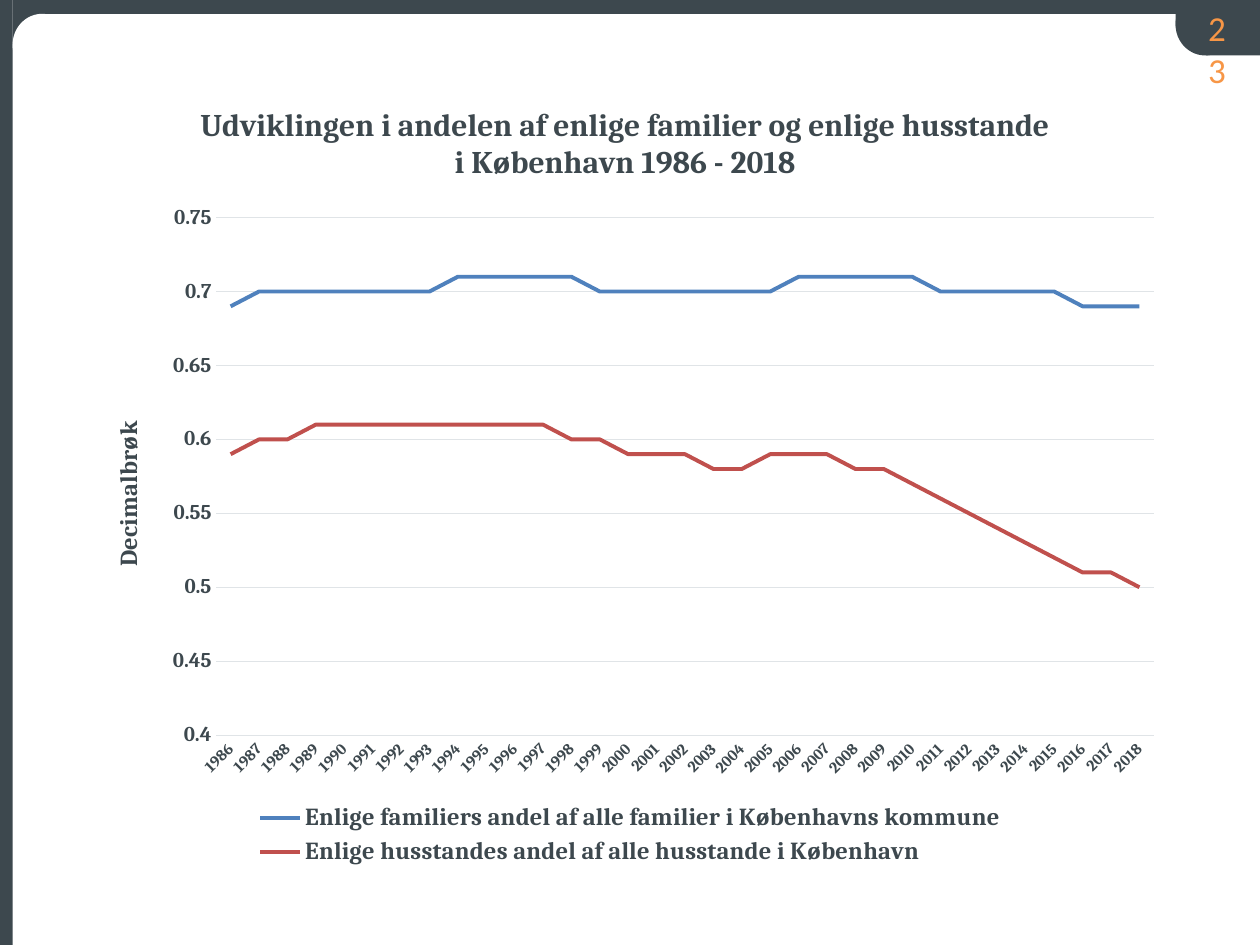
from pptx import Presentation
from pptx.chart.data import CategoryChartData
from pptx.dml.color import RGBColor
from pptx.enum.chart import XL_CHART_TYPE as Kind, XL_LEGEND_POSITION as Pos, XL_TICK_MARK as Tick
from pptx.enum.shapes import MSO_SHAPE as Form
from pptx.oxml import parse_xml
from pptx.oxml.ns import nsdecls, qn
from pptx.util import Inches, Pt

COLORS = {
    "dark": "3D484E", "white": "FFFFFF", "orange": "F79646",
    "grid": "E0E4E7", "blue": "4F81BD", "red": "C0504D",
}
FRAME = [
    (Form.RECTANGLE, "dark", (0, 0, 0.1, 7.5)),
    (Form.RECTANGLE, "dark", (0.1, 0, 9.9, 0.11)),
    (Form.RECTANGLE, "dark", (0.1, 0.11, 0.24, 0.24)),
    (Form.OVAL, "white", (0.1, 0.11, 0.47, 0.49)),
    (Form.RECTANGLE, "dark", (9.57, 0.11, 0.43, 0.33)),
    (Form.OVAL, "dark", (9.33, -0.05, 0.47, 0.49)),
    (Form.RECTANGLE, "dark", (9.33, 0, 0.31, 0.21)),
]
NUMBER = "23"
TITLE = "Udviklingen i andelen af enlige familier og enlige husstande i København 1986 - 2018"
AXIS = "Decimalbrøk"
YEARS = [str(year) for year in range(1986, 2019)]
SERIES = [
    ("Enlige familiers andel af alle familier i Københavns kommune", "blue", [
        0.69, 0.7, 0.7, 0.7, 0.7, 0.7, 0.7, 0.7, 0.71, 0.71, 0.71,
        0.71, 0.71, 0.7, 0.7, 0.7, 0.7, 0.7, 0.7, 0.7, 0.71, 0.71,
        0.71, 0.71, 0.71, 0.7, 0.7, 0.7, 0.7, 0.7, 0.69, 0.69, 0.69]),
    ("Enlige husstandes andel af alle husstande i København", "red", [
        0.59, 0.6, 0.6, 0.61, 0.61, 0.61, 0.61, 0.61, 0.61, 0.61, 0.61,
        0.61, 0.6, 0.6, 0.59, 0.59, 0.59, 0.58, 0.58, 0.59, 0.59, 0.59,
        0.58, 0.58, 0.57, 0.56, 0.55, 0.54, 0.53, 0.52, 0.51, 0.51, 0.5]),
]


def color(name):
    return RGBColor.from_string(COLORS[name])


def style(font, size, bold=True, name="Cambria", tint="dark"):
    font.size, font.bold, font.name = Pt(size), bold, name
    font.color.rgb = color(tint)


def stroke(line, tint, width):
    line.color.rgb = color(tint)
    line.width = Pt(width)


def caption(frame, text, size):
    run = frame.paragraphs[0].add_run()
    run.text = text
    style(run.font, size)


def place(node, after, inner=False, **spots):
    """Set a manual layout, in shares of the chart, behind the child named after."""
    for old in node.findall(qn("c:layout")):
        node.remove(old)
    target = '<c:layoutTarget val="inner"/>' if inner else ""
    modes = "".join(f'<c:{key}Mode val="edge"/>' for key in "xy")
    sizes = "".join(f'<c:{key} val="{val}"/>' for key, val in spots.items())
    layout = parse_xml(f'<c:layout {nsdecls("c")}><c:manualLayout>{target}{modes}{sizes}'
                       '</c:manualLayout></c:layout>')
    if after:
        node.find(qn(after)).addnext(layout)
    else:
        node.insert(0, layout)


def add_frame(slide):
    for form, tint, box in FRAME:
        shape = slide.shapes.add_shape(form, *map(Inches, box))
        shape.shadow.inherit = False
        shape.fill.solid()
        shape.fill.fore_color.rgb = color(tint)
        shape.line.fill.background()
    box = slide.shapes.add_textbox(*map(Inches, (9.49, 0, 0.4, 0.44)))
    box.text_frame.word_wrap = True
    run = box.text_frame.paragraphs[0].add_run()
    run.text = NUMBER
    style(run.font, 20, False, "Calibri", "orange")


def add_lines(slide):
    data = CategoryChartData()
    data.categories = YEARS
    for name, _, vals in SERIES:
        data.add_series(name, vals)
    area = map(Inches, (0.68, 0.59, 8.65, 6.32))
    chart = slide.shapes.add_chart(Kind.LINE, *area, data).chart
    style(chart.font, 10, False)
    plot = chart.plots[0]
    plot.vary_by_categories = False
    for line, (_, tint, _) in zip(plot.series, SERIES):
        line.smooth = False
        stroke(line.format.line, tint, 2.25)

    years, shares = chart.category_axis, chart.value_axis
    for axis, size in ((years, 9), (shares, 12)):
        axis.major_tick_mark = axis.minor_tick_mark = Tick.NONE
        style(axis.tick_labels.font, size)
    stroke(years.format.line, "grid", 0.75)
    years._element.find(qn("c:txPr")).find(qn("a:bodyPr")).set("rot", "-2700000")
    shares.minimum_scale, shares.maximum_scale, shares.major_unit = 0.4, 0.75, 0.05
    shares.format.line.fill.background()
    stroke(shares.major_gridlines.format.line, "grid", 0.75)

    chart.has_title = chart.has_legend = True
    caption(chart.chart_title.text_frame, TITLE, 18)
    caption(shares.axis_title.text_frame, AXIS, 14)
    shares.axis_title.text_frame._txBody.find(qn("a:bodyPr")).set("rot", "-5400000")
    chart.legend.position = Pos.BOTTOM
    chart.legend.include_in_layout = False
    style(chart.legend.font, 14)

    root = chart.element.find(qn("c:chart"))
    place(root.find(qn("c:plotArea")), None, True, x=0.12, y=0.18, w=0.86, h=0.65)
    place(root.find(qn("c:title")), "c:tx", x=0.1, y=0.03)
    place(shares.axis_title._element, "c:tx", x=0.02, y=0.43)
    place(root.find(qn("c:legend")), "c:legendPos", x=0.14, y=0.91, w=0.72, h=0.09)


def main():
    deck = Presentation()
    deck.slide_width, deck.slide_height = Inches(10), Inches(7.5)
    slide = deck.slides.add_slide(deck.slide_layouts[6])
    add_frame(slide)
    add_lines(slide)
    deck.save("out.pptx")


if __name__ == "__main__":
    main()
